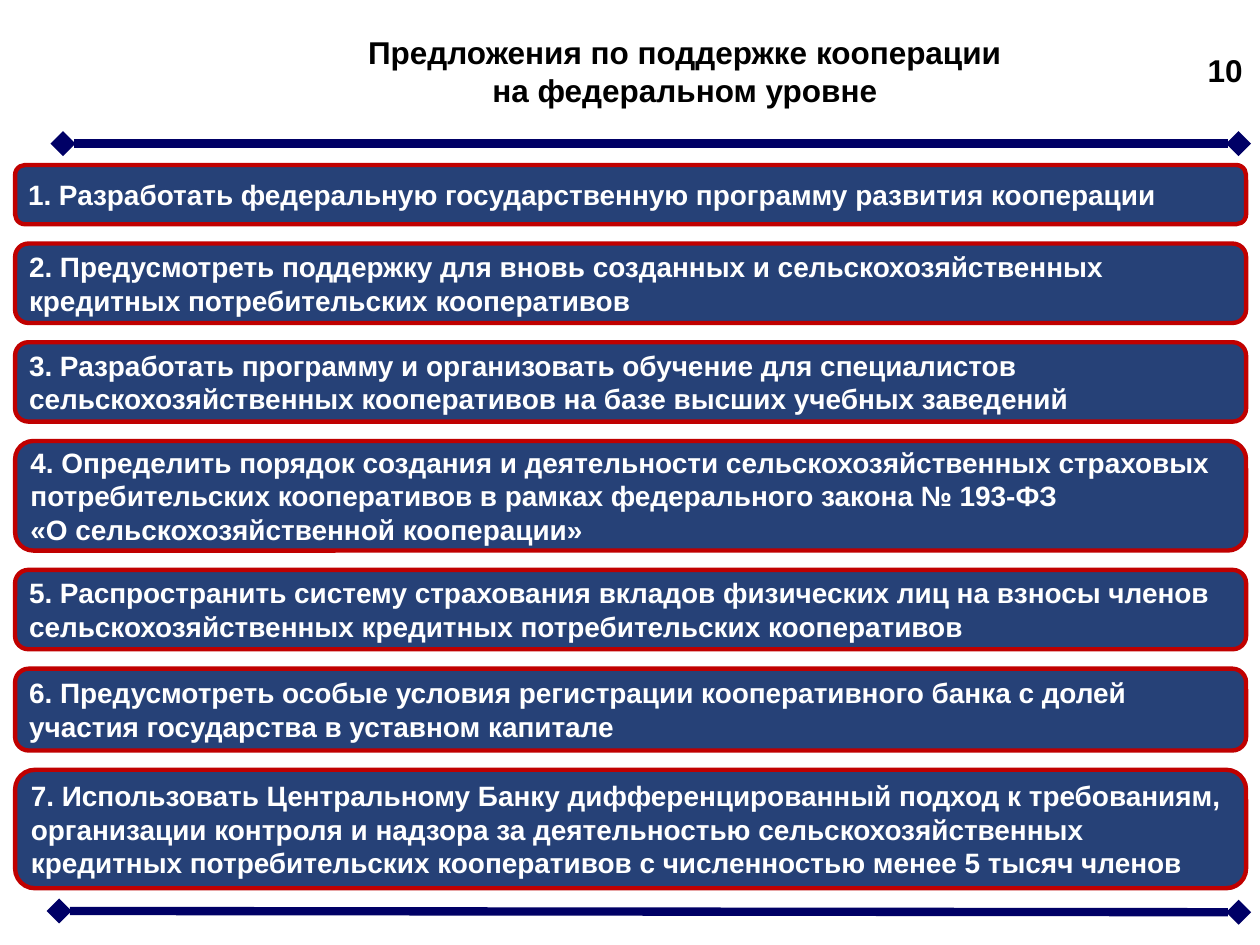
from dataclasses import dataclass

from lxml import etree
from pptx import Presentation
from pptx.dml.color import RGBColor
from pptx.enum.shapes import MSO_CONNECTOR, MSO_SHAPE
from pptx.enum.text import MSO_ANCHOR, PP_ALIGN
from pptx.oxml.ns import qn
from pptx.slide import Slide
from pptx.text.text import TextFrame
from pptx.util import Inches, Pt

STRAIGHT = MSO_CONNECTOR.STRAIGHT
ROUNDED = MSO_SHAPE.ROUNDED_RECTANGLE
TOP, MIDDLE = MSO_ANCHOR.TOP, MSO_ANCHOR.MIDDLE
LEFT, CENTER, RIGHT = PP_ALIGN.LEFT, PP_ALIGN.CENTER, PP_ALIGN.RIGHT


@dataclass(frozen=True)
class Theme:
    font: str = "Arial"
    heading_size: float = 18
    proposal_size: float = 16
    heading: RGBColor = RGBColor(0x00, 0x00, 0x00)
    proposal_text: RGBColor = RGBColor(0xFF, 0xFF, 0xFF)
    proposal_fill: RGBColor = RGBColor(0x00, 0x20, 0x60)
    proposal_opacity: int = 85
    proposal_border: RGBColor = RGBColor(0xC0, 0x00, 0x00)
    border_width: float = 2.5
    rule: RGBColor = RGBColor(0x00, 0x00, 0x66)
    rule_width: float = 4.75


@dataclass(frozen=True)
class Area:
    left: float
    top: float
    width: float
    height: float


@dataclass(frozen=True)
class Rule:
    start_x: float
    start_y: float
    end_x: float
    end_y: float


@dataclass(frozen=True)
class Proposal:
    height: float
    text: str
    inset: float = 0


THEME = Theme()
PROPOSALS_LEFT, PROPOSALS_WIDTH = 0.12, 9.77
PROPOSALS_TOP, PROPOSALS_BOTTOM = 1.31, 7.05

RULES = [Rule(0.5, 1.14, 9.83, 1.14), Rule(0.47, 7.23, 9.83, 7.24)]

PROPOSALS = [
    Proposal(0.47, "1. Разработать федеральную государственную программу развития "
                   "кооперации", inset=0.04),
    Proposal(0.63, "2. Предусмотреть поддержку для вновь созданных и "
                   "сельскохозяйственных кредитных потребительских кооперативов"),
    Proposal(0.63, "3. Разработать программу и организовать обучение для специалистов "
                   "сельскохозяйственных кооперативов на базе высших учебных заведений"),
    Proposal(0.87, "4. Определить порядок создания и деятельности сельскохозяйственных "
                   "страховых потребительских кооперативов в рамках федерального "
                   "закона № 193-ФЗ\n«О сельскохозяйственной кооперации»"),
    Proposal(0.63, "5. Распространить систему страхования вкладов физических лиц на "
                   "взносы членов сельскохозяйственных кредитных потребительских "
                   "кооперативов"),
    Proposal(0.65, "6. Предусмотреть особые условия регистрации кооперативного банка "
                   "с долей участия государства в уставном капитале"),
    Proposal(0.94, "7. Использовать Центральному Банку дифференцированный подход к "
                   "требованиям, организации контроля и надзора за деятельностью "
                   "сельскохозяйственных кредитных потребительских кооперативов "
                   "с численностью менее 5 тысяч членов"),
]


def write_text(frame: TextFrame, text: str, size: float, color: RGBColor,
               align: PP_ALIGN, anchor: MSO_ANCHOR) -> None:
    frame.text = text
    frame.word_wrap = True
    frame.vertical_anchor = anchor
    for para in frame.paragraphs:
        para.alignment = align
        for span in para.runs:
            span.font.name = THEME.font
            span.font.size = Pt(size)
            span.font.bold = True
            span.font.color.rgb = color


def add_heading(page: Slide, area: Area, text: str,
                align: PP_ALIGN, anchor: MSO_ANCHOR) -> None:
    box = page.shapes.add_textbox(Inches(area.left), Inches(area.top),
                                  Inches(area.width), Inches(area.height))
    write_text(box.text_frame, text, THEME.heading_size, THEME.heading, align, anchor)


def add_rule(page: Slide, rule: Rule) -> None:
    """Draw a thick line with a diamond at each end."""
    connector = page.shapes.add_connector(
        STRAIGHT, Inches(rule.start_x), Inches(rule.start_y),
        Inches(rule.end_x), Inches(rule.end_y))
    connector.line.color.rgb = THEME.rule
    connector.line.width = Pt(THEME.rule_width)
    outline = connector.line._get_or_add_ln()
    for end in ("a:headEnd", "a:tailEnd"):
        etree.SubElement(outline, qn(end), type="diamond")
    etree.SubElement(connector._element.spPr, qn("a:effectLst"))


def add_proposal(page: Slide, proposal: Proposal, top: float) -> None:
    box = page.shapes.add_shape(ROUNDED, Inches(PROPOSALS_LEFT), Inches(top),
                                Inches(PROPOSALS_WIDTH), Inches(proposal.height))
    box.shadow.inherit = False
    box.fill.solid()
    box.fill.fore_color.rgb = THEME.proposal_fill
    fill_color = box._element.spPr.find(qn("a:solidFill")).find(qn("a:srgbClr"))
    etree.SubElement(fill_color, qn("a:alpha"), val=str(THEME.proposal_opacity * 1000))
    box.line.color.rgb = THEME.proposal_border
    box.line.width = Pt(THEME.border_width)
    frame = box.text_frame
    frame.margin_left, frame.margin_right = Inches(0.08), Inches(0)
    frame.margin_top = frame.margin_bottom = Inches(proposal.inset)
    write_text(frame, proposal.text, THEME.proposal_size, THEME.proposal_text, LEFT, MIDDLE)


def add_proposals(page: Slide) -> None:
    """Stack the proposals with equal gaps between the two limits."""
    free = PROPOSALS_BOTTOM - PROPOSALS_TOP - sum(item.height for item in PROPOSALS)
    gap = free / (len(PROPOSALS) - 1)
    top = PROPOSALS_TOP
    for proposal in PROPOSALS:
        add_proposal(page, proposal, top)
        top += proposal.height + gap


def main() -> None:
    deck = Presentation()
    deck.slide_width, deck.slide_height = Inches(10), Inches(7.5)
    page = deck.slides.add_slide(deck.slide_layouts[6])
    for rule in RULES:
        add_rule(page, rule)
    add_heading(page, Area(1.14, 0.06, 8.59, 1.01),
                "Предложения по поддержке кооперации\vна федеральном уровне", CENTER, MIDDLE)
    add_heading(page, Area(9.41, 0.36, 0.55, 0.47), "10", RIGHT, TOP)
    add_proposals(page)
    deck.save("out.pptx")


if __name__ == "__main__":
    main()
